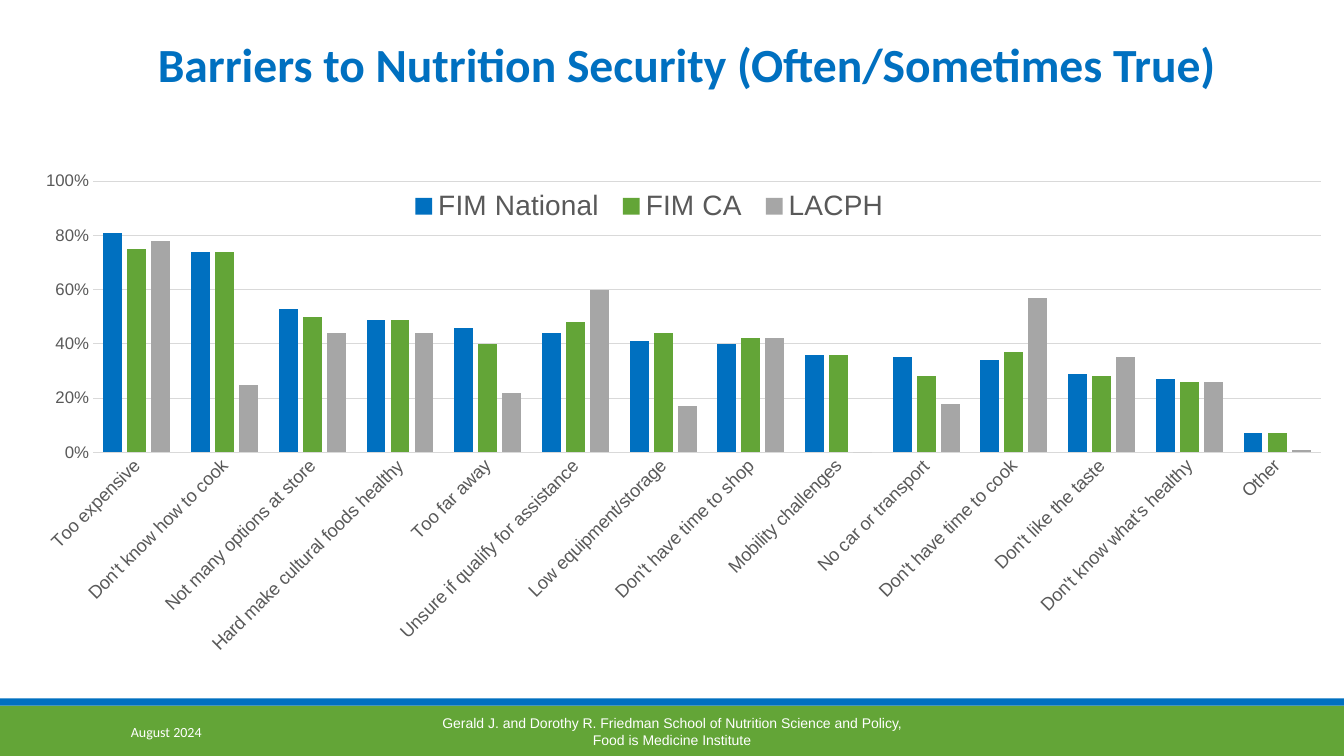
from lxml import etree
from pptx import Presentation
from pptx.chart.data import CategoryChartData
from pptx.dml.color import RGBColor
from pptx.enum.chart import XL_CHART_TYPE as ChartType
from pptx.enum.chart import XL_LEGEND_POSITION as LegendPosition
from pptx.enum.chart import XL_TICK_MARK as TickMark
from pptx.enum.shapes import MSO_SHAPE as Shape
from pptx.enum.text import MSO_ANCHOR as Anchor
from pptx.enum.text import PP_ALIGN as Align
from pptx.oxml import parse_xml
from pptx.oxml.ns import nsdecls, qn
from pptx.util import Cm, Pt

COLORS = {
    "blue": "0070C0", "green": "63A537", "gray": "A6A6A6",
    "grid": "D9D9D9", "label": "595959", "white": "FFFFFF",
}

BARRIERS = [
    # barrier, FIM National, FIM CA, LACPH
    ("Too expensive", 0.81, 0.75, 0.78),
    ("Don't know how to cook", 0.74, 0.74, 0.25),
    ("Not many options at store", 0.53, 0.5, 0.44),
    ("Hard make cultural foods healthy", 0.49, 0.49, 0.44),
    ("Too far away", 0.46, 0.4, 0.22),
    ("Unsure if qualify for assistance", 0.44, 0.48, 0.6),
    ("Low equipment/storage", 0.41, 0.44, 0.17),
    ("Don't have time to shop", 0.4, 0.42, 0.42),
    ("Mobility challenges", 0.36, 0.36, 0),
    ("No car or transport", 0.35, 0.28, 0.18),
    ("Don't have time to cook", 0.34, 0.37, 0.57),
    ("Don't like the taste", 0.29, 0.28, 0.35),
    ("Don't know what's healthy", 0.27, 0.26, 0.26),
    ("Other", 0.07, 0.07, 0.01),
]
SURVEYS = [("FIM National", "blue"), ("FIM CA", "green"), ("LACPH", "gray")]


def rgb(name):
    return RGBColor.from_string(COLORS[name])


def style_font(font, size, color, face="Arial", bold=False):
    font.size, font.name, font.bold = Pt(size), face, bold
    font.color.rgb = rgb(color)


def add_text(page, place, text, *, size, color, face="Arial", bold=False,
             align=Align.LEFT, anchor=Anchor.MIDDLE, spacing=None):
    box = page.shapes.add_textbox(*map(Cm, place))
    frame = box.text_frame
    frame.word_wrap = True
    frame.vertical_anchor = anchor
    for index, line in enumerate(text.split("\n")):
        para = frame.add_paragraph() if index else frame.paragraphs[0]
        para.alignment = align
        para.line_spacing = spacing
        span = para.add_run()
        span.text = line
        style_font(span.font, size, color, face, bold)


def add_band(page, top, height, color):
    band = page.shapes.add_shape(Shape.RECTANGLE, 0, Cm(top), Cm(33.87), Cm(height))
    band.shadow.inherit = False
    band.fill.solid()
    band.fill.fore_color.rgb = rgb(color)
    band.line.fill.background()


def manual_layout(x, y, width, height, inner=False):
    layout = etree.Element(qn("c:layout"))
    manual = etree.SubElement(layout, qn("c:manualLayout"))
    settings = [("layoutTarget", "inner")] if inner else []
    settings += [("xMode", "edge"), ("yMode", "edge"),
                 ("x", x), ("y", y), ("w", width), ("h", height)]
    for tag, value in settings:
        etree.SubElement(manual, qn(f"c:{tag}")).set("val", str(value))
    return layout


def style_line(line, color):
    line.color.rgb = rgb(color)
    line.width = Pt(0.75)


def style_axes(chart):
    barriers, share = chart.category_axis, chart.value_axis
    for axis, size in ((barriers, 13), (share, 12)):
        axis.major_tick_mark = axis.minor_tick_mark = TickMark.NONE
        style_font(axis.tick_labels.font, size, "label")
    style_line(barriers.format.line, "grid")
    # Category labels slant upwards at 45 degrees
    slant = barriers._element.find(qn("c:txPr")).find(qn("a:bodyPr"))
    slant.set("rot", "-2700000")
    slant.set("vert", "horz")

    share.minimum_scale, share.maximum_scale, share.major_unit = 0, 1, 0.2
    share.tick_labels.number_format = "0%"
    share.tick_labels.number_format_is_linked = False
    share.format.line.fill.background()
    share.has_major_gridlines = True
    style_line(share.major_gridlines.format.line, "grid")


def add_barrier_chart(page, place):
    names, *columns = zip(*BARRIERS)
    data = CategoryChartData(number_format="0%")
    data.categories = names
    for (survey, _), values in zip(SURVEYS, columns):
        data.add_series(survey, values)
    chart = page.shapes.add_chart(
        ChartType.COLUMN_CLUSTERED, *map(Cm, place), data).chart
    chart.has_title = False
    style_font(chart.font, 10, "label")
    style_axes(chart)

    # Columns
    plot = chart.plots[0]
    plot.gap_width, plot.overlap, plot.vary_by_categories = 110, -27, False
    for series, (_, color) in zip(plot.series, SURVEYS):
        series.format.fill.solid()
        series.format.fill.fore_color.rgb = rgb(color)

    # Legend over the top of the plot
    chart.has_legend = True
    legend = chart.legend
    legend.position = LegendPosition.TOP
    legend.include_in_layout = False
    style_font(legend.font, 20, "label")
    legend._element.find(qn("c:legendPos")).addnext(
        manual_layout(0.28, 0.03, 0.38, 0.07))

    # Fixed plot area and clear chart background
    area = chart._chartSpace.chart.plotArea
    for layout in area.findall(qn("c:layout")):
        area.remove(layout)
    area.insert(0, manual_layout(0.045, 0.02, 0.938, 0.49, inner=True))
    chart._chartSpace.chart.addnext(parse_xml(
        f'<c:spPr {nsdecls("c", "a")}><a:noFill/><a:ln><a:noFill/></a:ln></c:spPr>'))


def main():
    deck = Presentation()
    deck.slide_width, deck.slide_height = Cm(33.87), Cm(19.05)
    page = deck.slides.add_slide(deck.slide_layouts[6])

    # Footer bands
    add_band(page, 17.78, 1.27, "green")
    add_band(page, 17.6, 0.18, "blue")

    # Title and chart
    add_text(page, (3.73, 0.79, 30.12, 1.65),
             "Barriers to Nutrition Security (Often/Sometimes True)",
             size=34, color="blue", face="Calibri", bold=True,
             anchor=Anchor.BOTTOM, spacing=0.85)
    add_barrier_chart(page, (0.86, 4.29, 32.99, 13.94))

    # Footer text
    add_text(page, (3.05, 17.93, 6.86, 1.02), "August 2024",
             size=10, color="white", face="Calibri")
    add_text(page, (10.24, 17.93, 13.39, 1.02),
             "Gerald J. and Dorothy R. Friedman School of Nutrition Science and Policy,\n"
             "Food is Medicine Institute",
             size=10, color="white", align=Align.CENTER)

    deck.save("out.pptx")


if __name__ == "__main__":
    main()
